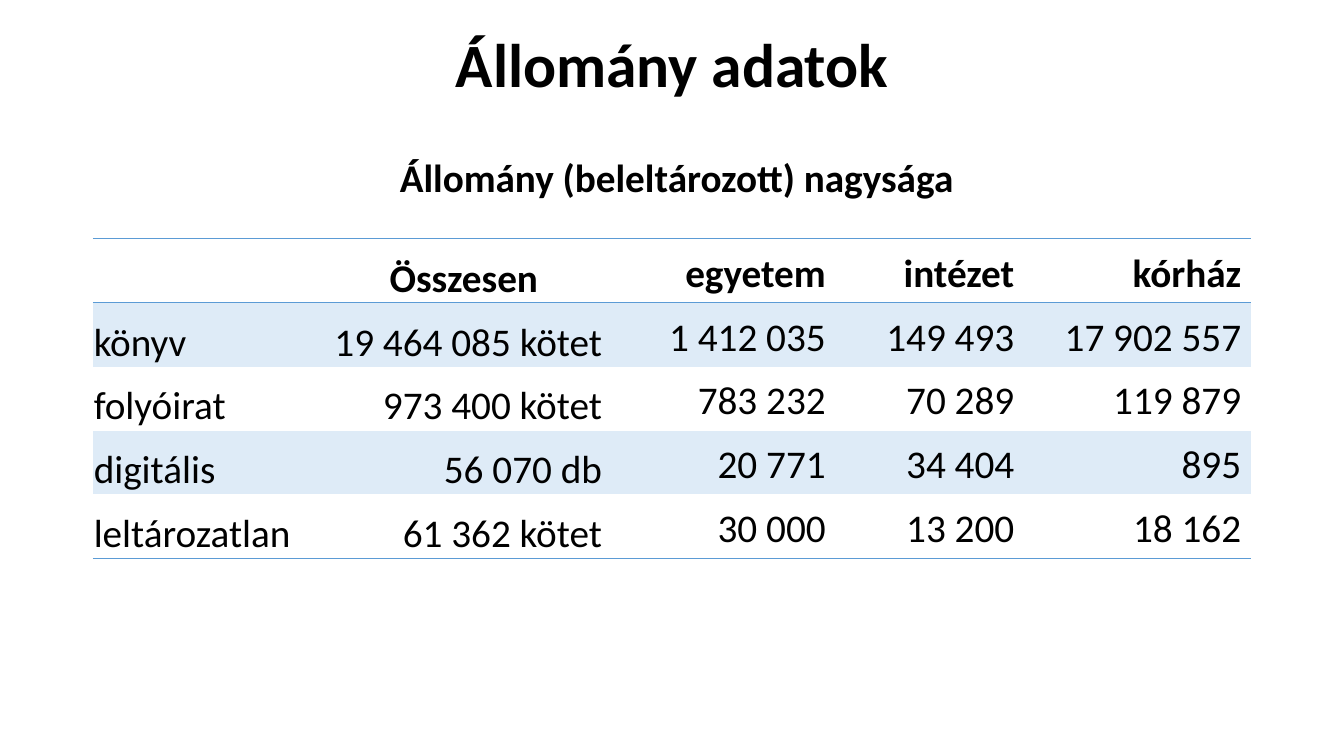
from lxml.etree import SubElement
from pptx import Presentation
from pptx.dml.color import RGBColor
from pptx.enum.text import MSO_ANCHOR, PP_ALIGN
from pptx.oxml.ns import qn
from pptx.util import Inches, Pt

BLACK = RGBColor(0x00, 0x00, 0x00)
BLUE = RGBColor(0x5B, 0x9B, 0xD5)
PALE_BLUE = RGBColor(0xDE, 0xEB, 0xF7)
NO_STYLE = "{2D5ABB26-0587-4C30-8999-92F81FD0307C}"
MARGIN = 0.92
COLUMN_WIDTHS = [2.3, 2.76, 2.31, 1.87, 2.25]
ROW_HEIGHT = 0.634
HOLDINGS = [
    ["", "Összesen", "egyetem", "intézet", "kórház"],
    ["könyv", "19 464 085 kötet", "1 412 035", "149 493", "17 902 557"],
    ["folyóirat", "973 400 kötet", "783 232", "70 289", "119 879"],
    ["digitális", "56 070 db", "20 771", "34 404", "895"],
    ["leltározatlan", "61 362 kötet", "30 000", "13 200", "18 162"],
]


def write(frame, text, size, bold, alignment):
    para = frame.paragraphs[0]
    para.text = text
    para.alignment = alignment
    para.font.name = "Calibri"
    para.font.size = Pt(size)
    para.font.bold = bold
    para.font.color.rgb = BLACK
    return para


def add_border(cell, side):
    line = SubElement(cell._tc.get_or_add_tcPr(), qn(f"a:{side}"), w=str(Pt(1)))
    fill = SubElement(line, qn("a:solidFill"))
    SubElement(fill, qn("a:srgbClr"), val=str(BLUE))


deck = Presentation()
deck.slide_width = Inches(13.33)
deck.slide_height = Inches(7.5)
page = deck.slides.add_slide(deck.slide_layouts[5])

title = page.shapes.title
title.left, title.top = Inches(MARGIN), 0
title.width, title.height = Inches(11.5), Inches(1.35)
title.text_frame.vertical_anchor = MSO_ANCHOR.MIDDLE
write(title.text_frame, "Állomány adatok", 44, True, PP_ALIGN.CENTER).line_spacing = 0.9

table = page.shapes.add_table(
    len(HOLDINGS), len(COLUMN_WIDTHS), Inches(MARGIN), Inches(2.37),
    Inches(sum(COLUMN_WIDTHS)), Inches(ROW_HEIGHT * len(HOLDINGS)),
).table
table._tbl.tblPr.find(qn("a:tableStyleId")).text = NO_STYLE
for column, width in zip(table.columns, COLUMN_WIDTHS):
    column.width = Inches(width)

last_row = len(HOLDINGS) - 1
for row_index, values in enumerate(HOLDINGS):
    table.rows[row_index].height = Inches(ROW_HEIGHT)
    is_header = row_index == 0
    for column_index, value in enumerate(values):
        cell = table.cell(row_index, column_index)
        if is_header:
            add_border(cell, "lnT")
        if row_index in (0, last_row):
            add_border(cell, "lnB")
        if row_index % 2:
            cell.fill.solid()
            cell.fill.fore_color.rgb = PALE_BLUE
        else:
            cell.fill.background()
        cell.vertical_anchor = MSO_ANCHOR.BOTTOM
        if column_index < 2:
            cell.margin_left = cell.margin_right = cell.margin_top = Inches(0.01)
            cell.margin_bottom = 0
        if column_index == 0:
            alignment = PP_ALIGN.LEFT
        elif is_header and column_index == 1:
            alignment = PP_ALIGN.CENTER
        else:
            alignment = PP_ALIGN.RIGHT
        para = write(cell.text_frame, value, 28, is_header, alignment)
        if is_header and value:
            para.space_after = Pt(18)

subtitle = page.shapes.add_textbox(Inches(2.65), Inches(1.47), Inches(8.12), Inches(0.57))
subtitle.text_frame.word_wrap = True
write(subtitle.text_frame, "Állomány (beleltározott) nagysága", 28, True, PP_ALIGN.CENTER)

deck.save("out.pptx")
